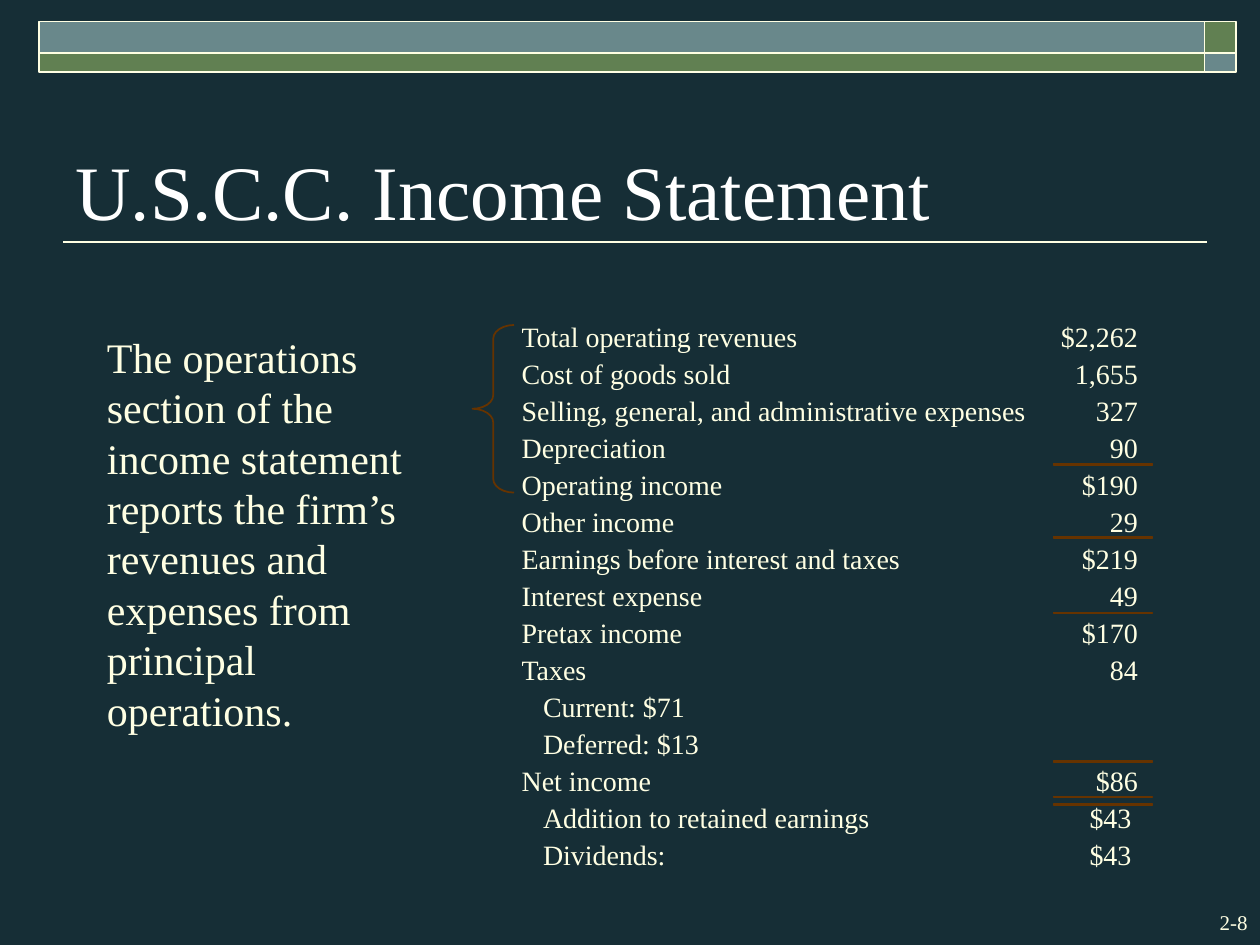
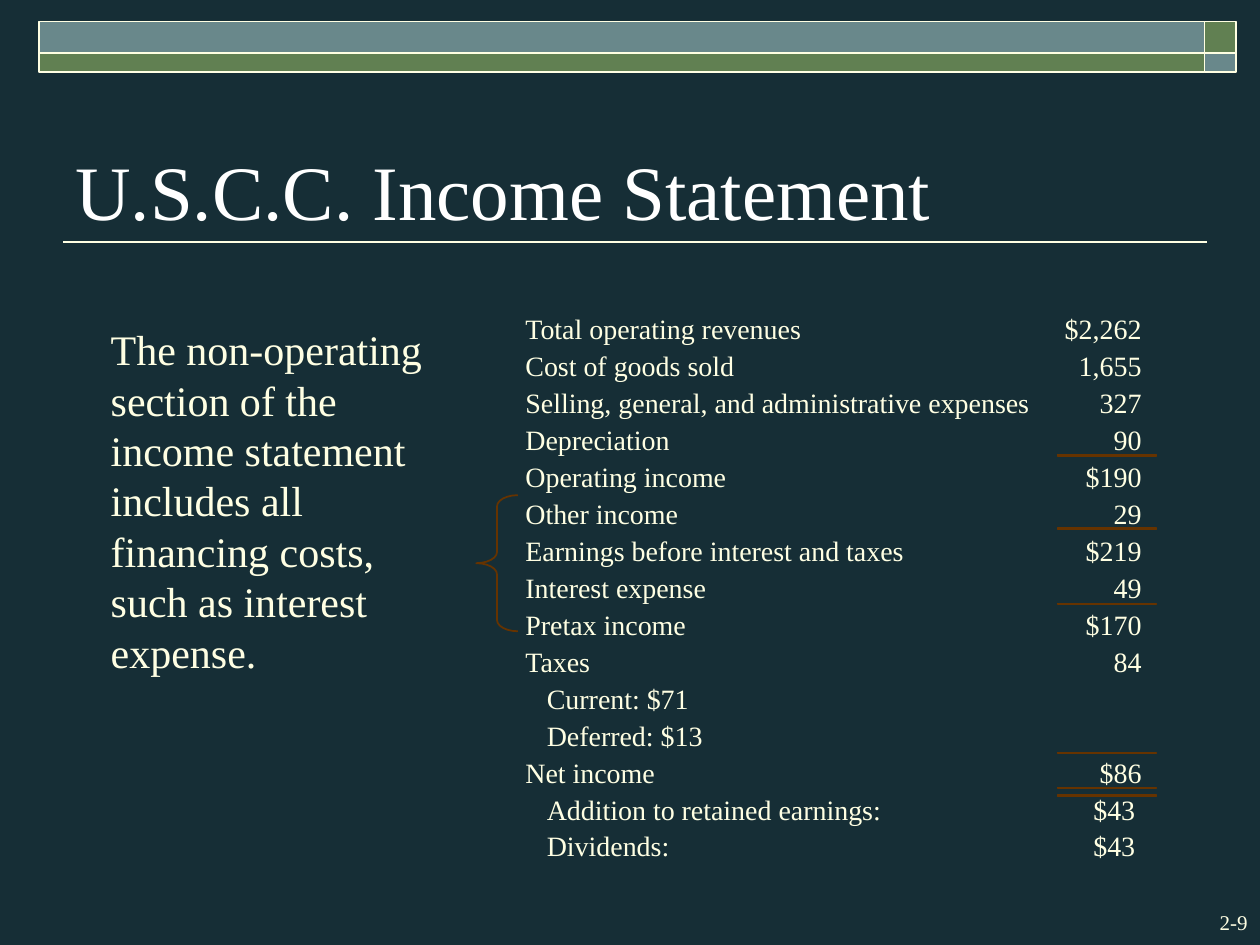
from dataclasses import dataclass

from lxml import etree
from pptx import Presentation
from pptx.dml.color import RGBColor
from pptx.enum import shapes, text
from pptx.oxml import ns
from pptx.shapes.autoshape import Shape
from pptx.slide import Slide
from pptx.util import Inches, Length, Pt


@dataclass(frozen=True)
class Theme:
    background: RGBColor = RGBColor(0x16, 0x2E, 0x36)
    cream: RGBColor = RGBColor(0xFF, 0xFF, 0xE3)
    white: RGBColor = RGBColor(0xFF, 0xFF, 0xFF)
    teal: RGBColor = RGBColor(0x69, 0x88, 0x8B)
    green: RGBColor = RGBColor(0x61, 0x80, 0x52)
    brown: RGBColor = RGBColor(0x66, 0x33, 0x00)
    black: RGBColor = RGBColor(0x00, 0x00, 0x00)
    font: str = "Times New Roman"
    title_size: Length = Pt(44)
    body_size: Length = Pt(24)
    body_leading: Length = Pt(28.8)
    row_size: Length = Pt(16)
    number_size: Length = Pt(12)


@dataclass(frozen=True)
class Box:
    """Left, top, width and height in inches."""
    left: float
    top: float
    width: float
    height: float

    def lengths(self) -> tuple[Length, Length, Length, Length]:
        return (Inches(self.left), Inches(self.top),
                Inches(self.width), Inches(self.height))


@dataclass(frozen=True)
class Band:
    box: Box
    color: RGBColor


@dataclass(frozen=True)
class Row:
    label: str
    amount: str = ""
    indented: bool = False


@dataclass(frozen=True)
class Section:
    """One slide: its commentary and the statement rows that the brace marks."""
    number: str
    commentary: str
    commentary_box: Box
    statement_left: float
    statement_top: float
    brace: Box
    brace_curve: float
    retained_label: str


THEME = Theme()
TITLE = "U.S.C.C. Income Statement"
BANDS = (
    Band(Box(9.56, 0.17, 0.25, 0.25), THEME.green),
    Band(Box(0.31, 0.17, 9.25, 0.25), THEME.teal),
    Band(Box(0.31, 0.42, 9.25, 0.15), THEME.green),
    Band(Box(9.56, 0.42, 0.25, 0.15), THEME.teal),
)

ROWS = (
    Row("Total operating revenues", "$2,262"),
    Row("Cost of goods sold", "1,655"),
    Row("Selling, general, and administrative expenses", "327"),
    Row("Depreciation", "90"),
    Row("Operating income", "$190"),
    Row("Other income", "29"),
    Row("Earnings before interest and taxes", "$219"),
    Row("Interest expense", "49"),
    Row("Pretax income", "$170"),
    Row("Taxes", "84"),
    Row("Current: $71", indented=True),
    Row("Deferred: $13", indented=True),
    Row("Net income", "$86"),
)
ROW_PITCH = 4.11 / 14
ROW_HEIGHT = 0.27
INDENT = 0.17
LABEL_WIDTH = 4.15
AMOUNT_WIDTH = 0.7
AMOUNT_RIGHT = 4.89
DETAIL_AMOUNT_RIGHT = 4.84
SUM_RULE_LEFT = 4.22
SUM_RULE_WIDTH = 0.79
SUM_RULE_TOPS = (1.14, 1.72, 2.32, 3.5, 3.78, 3.84)

SECTIONS = (
    Section(
        "2-8",
        "The operations section of the income statement reports the firm’s "
        "revenues and expenses from principal operations.",
        Box(0.75, 2.58, 2.75, 3.3), 4.14, 2.54,
        Box(3.75, 2.58, 0.33, 1.33), 0.33, "Addition to retained earnings"),
    Section(
        "2-9",
        "The non-operating section of the income statement includes all "
        "financing costs, such as interest expense.",
        Box(0.78, 2.52, 2.75, 2.9), 4.17, 2.47,
        Box(3.78, 3.93, 0.33, 1.08), 0.27, "Addition to retained earnings:"),
)


def add_text(slide: Slide, box: Box, words: str, size: Length,
             color: RGBColor = THEME.cream,
             align: text.PP_ALIGN = text.PP_ALIGN.LEFT,
             anchor: text.MSO_ANCHOR = text.MSO_ANCHOR.TOP,
             leading: Length | None = None, padded: bool = True) -> None:
    frame = slide.shapes.add_textbox(*box.lengths()).text_frame
    frame.word_wrap = True
    frame.vertical_anchor = anchor
    if not padded:
        frame.margin_left = frame.margin_right = Inches(0)
        frame.margin_top = frame.margin_bottom = Inches(0)
    paragraph = frame.paragraphs[0]
    paragraph.alignment = align
    paragraph.line_spacing = leading
    run = paragraph.add_run()
    run.text = words
    run.font.name = THEME.font
    run.font.size = size
    run.font.color.rgb = color


def add_outlined(slide: Slide, kind: shapes.MSO_SHAPE, box: Box,
                 line: RGBColor, weight: float,
                 fill: RGBColor | None = None) -> Shape:
    shape = slide.shapes.add_shape(kind, *box.lengths())
    shape.shadow.inherit = False
    if fill is None:
        shape.fill.background()
    else:
        shape.fill.solid()
        shape.fill.fore_color.rgb = fill
    shape.line.color.rgb = line
    shape.line.width = Pt(weight)
    return shape


def add_frame(slide: Slide, number: str) -> None:
    """Background, bands, title with its underline, and slide number."""
    slide.background.fill.solid()
    slide.background.fill.fore_color.rgb = THEME.background
    underline = slide.shapes.add_connector(
        shapes.MSO_CONNECTOR.STRAIGHT,
        Inches(0.5), Inches(1.92), Inches(9.58), Inches(1.92))
    underline.line.color.rgb = THEME.cream
    underline.line.width = Pt(1)
    etree.SubElement(underline._element.spPr, ns.qn("a:effectLst"))
    for band in BANDS:
        add_outlined(slide, shapes.MSO_SHAPE.RECTANGLE, band.box,
                     THEME.cream, 1, band.color)
    add_text(slide, Box(0.5, 0.67, 9, 1.25), TITLE, THEME.title_size,
             THEME.white, anchor=text.MSO_ANCHOR.BOTTOM)
    add_text(slide, Box(9.17, 7.17, 0.83, 0.3), number, THEME.number_size,
             align=text.PP_ALIGN.RIGHT)


def add_statement(slide: Slide, section: Section) -> None:
    left, top = section.statement_left, section.statement_top
    details = (Row(section.retained_label, "$43", True),
               Row("Dividends:", "$43", True))
    for index, row in enumerate(ROWS + details):
        row_top = top + index * ROW_PITCH
        indent = INDENT if row.indented else 0
        add_text(slide, Box(left + indent, row_top, LABEL_WIDTH - indent, ROW_HEIGHT),
                 row.label, THEME.row_size, padded=False)
        if row.amount:
            right = DETAIL_AMOUNT_RIGHT if row.indented else AMOUNT_RIGHT
            add_text(slide, Box(left + right - AMOUNT_WIDTH, row_top,
                                AMOUNT_WIDTH, ROW_HEIGHT),
                     row.amount, THEME.row_size,
                     align=text.PP_ALIGN.RIGHT, padded=False)
    for rule_top in SUM_RULE_TOPS:
        add_outlined(slide, shapes.MSO_SHAPE.RECTANGLE,
                     Box(left + SUM_RULE_LEFT, top + rule_top, SUM_RULE_WIDTH, 0.01),
                     THEME.brown, 0.75, THEME.black)


def add_section(deck: Presentation, section: Section) -> None:
    slide = deck.slides.add_slide(deck.slide_layouts[6])
    add_frame(slide, section.number)
    add_statement(slide, section)
    brace = add_outlined(slide, shapes.MSO_SHAPE.LEFT_BRACE, section.brace,
                         THEME.brown, 1)
    brace.adjustments[0] = section.brace_curve
    add_text(slide, section.commentary_box, section.commentary,
             THEME.body_size, leading=THEME.body_leading)


def main() -> None:
    deck = Presentation()
    deck.slide_width, deck.slide_height = Inches(10), Inches(7.5)
    for section in SECTIONS:
        add_section(deck, section)
    deck.save("out.pptx")


if __name__ == "__main__":
    main()
